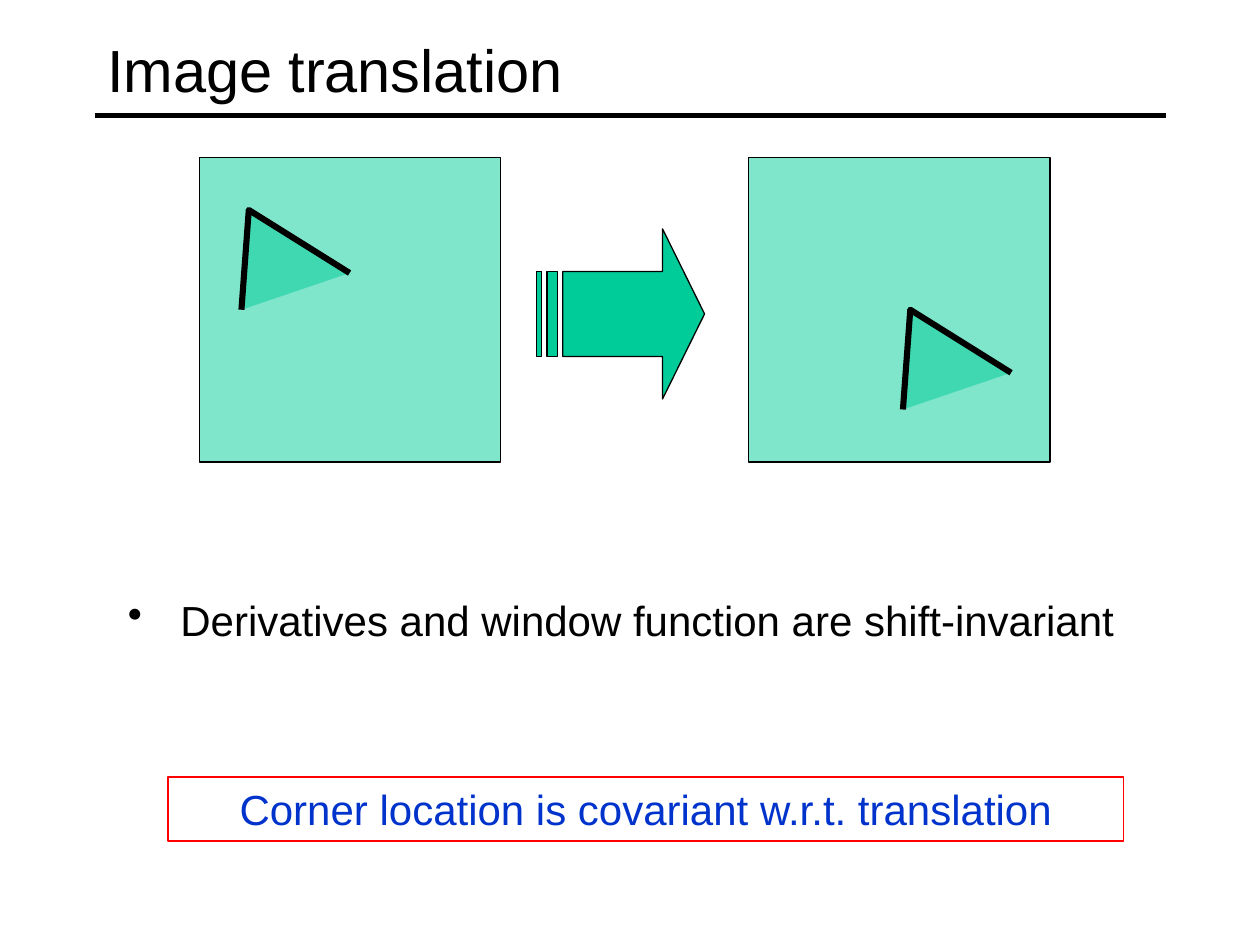
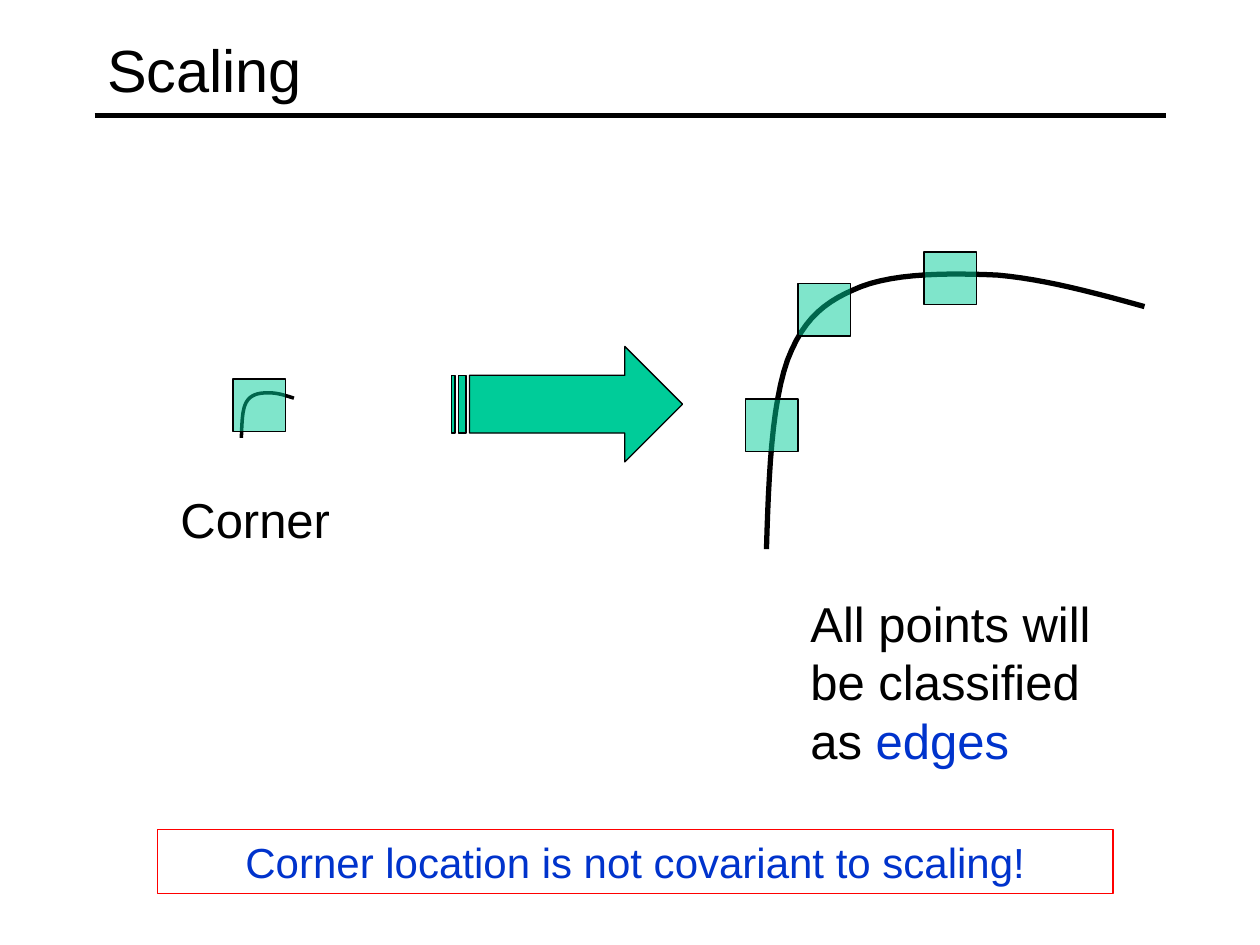
from lxml.etree import SubElement as Sub
from pptx import Presentation
from pptx.dml.color import RGBColor as RGB
from pptx.enum.shapes import MSO_CONNECTOR as Conn, MSO_SHAPE as Kind
from pptx.enum.text import MSO_ANCHOR as Anchor, PP_ALIGN as Align
from pptx.oxml.ns import qn
from pptx.util import Emu, Inches, Pt

COLS, ROWS = 120, 90
WIDE, HIGH = Inches(10), Inches(7.5)
HUES = {"ink": "000000", "mint": "00CC99", "frame": "FF0000", "key": "0033CC"}
FONTS = {
    "title": {"name": "Arial", "size": Pt(34)},
    "label": {"name": "Arial", "size": Pt(28)},
    "body": {"name": "Arial", "size": Pt(24)},
}
FRAME = {"word_wrap": True, "vertical_anchor": Anchor.MIDDLE}
WEDGE = [(0, 9.5), (0.7, 0), (10.3, 6)]
BEND_SIZE = (36, 26.3)
BEND = [
    (0, 26.3), (0.2, 19.4), (0.5, 12.5), (2, 8.3),
    (3.6, 4.1), (5.8, 2.6), (9, 1.3),
    (12.4, 0), (17.5, 0), (22, 0.2),
    (26.5, 0.6), (31.3, 1.9), (36, 3.2),
]
STEPS = 12
SPOT = 5


def col(n):
    """Return the distance of n grid columns."""
    return Emu(round(WIDE * n / COLS))


def row(n):
    """Return the distance of n grid rows."""
    return Emu(round(HIGH * n / ROWS))


def place(x, y, w, h):
    """Return a grid box as slide lengths."""
    return col(x), row(y), col(w), row(h)


def assign(item, values):
    """Set each named value on an item."""
    for name, value in values.items():
        setattr(item, name, value)


def paint(shape, fill=None, line="ink", width=0.75, alpha=None):
    """Give a shape its fill, outline and opacity in percent."""
    shape.shadow.inherit = False
    if fill:
        shape.fill.solid()
        shape.fill.fore_color.rgb = RGB.from_string(HUES[fill])
    else:
        shape.fill.background()
    if alpha:
        hue = shape._element.spPr.find(qn("a:solidFill")).find(qn("a:srgbClr"))
        Sub(hue, qn("a:alpha"), val=str(alpha * 1000))
    shape.line.color.rgb = RGB.from_string(HUES[line])
    shape.line.width = Pt(width)


def write(shape, runs, style, align=Align.LEFT, anchor=Anchor.TOP):
    """Fill a shape with one paragraph of (text, colour) runs."""
    frame = shape.text_frame
    assign(frame, FRAME | {"vertical_anchor": anchor})
    para = frame.paragraphs[0]
    para.alignment = align
    for text, hue in runs:
        run = para.add_run()
        run.text = text
        assign(run.font, FONTS[style])
        run.font.color.rgb = RGB.from_string(HUES[hue])
    return para


def start(deck, title):
    """Add a slide with its title and the rule below it."""
    slide = deck.slides.add_slide(deck.slide_layouts[5])
    head = slide.shapes.title
    box = place(9, 1, 102, 11)
    assign(head, dict(zip(("left", "top", "width", "height"), box)))
    write(head, [(title, "ink")], "title", anchor=Anchor.MIDDLE)
    rule = slide.shapes.add_connector(
        Conn.STRAIGHT, col(9), row(11), col(111), row(11))
    rule.line.color.rgb = RGB.from_string(HUES["ink"])
    rule.line.width = Pt(3)
    Sub(rule._element.spPr, qn("a:effectLst"))
    return slide


def label(slide, box, runs, style="label"):
    """Add a plain text box and return its paragraph."""
    return write(slide.shapes.add_textbox(*place(*box)), runs, style)


def bullet(slide, box, text):
    """Add a text box with one bulleted line."""
    props = label(slide, box, [(text, "ink")], "body")._p.get_or_add_pPr()
    props.set("marL", str(col(5)))
    props.set("indent", str(-col(5)))
    Sub(props, qn("a:buChar"), char="•")


def verdict(slide, x, y, text):
    """Add the framed conclusion."""
    box = slide.shapes.add_shape(Kind.RECTANGLE, *place(x, y, 91, 6.1))
    paint(box, line="frame")
    write(box, [(text, "key")], "body", Align.CENTER, Anchor.MIDDLE)


def pane(slide, x, y, w, h):
    """Add a half-clear mint rectangle."""
    box = slide.shapes.add_shape(Kind.RECTANGLE, *place(x, y, w, h))
    paint(box, "mint", alpha=50)


def arrow(slide, box, head):
    """Add a striped arrow whose head is a share of its height."""
    shape = slide.shapes.add_shape(Kind.STRIPED_RIGHT_ARROW, *place(*box))
    shape.adjustments[0] = 0.5
    shape.adjustments[1] = head
    paint(shape, "mint")


def trace(slide, x, y, points, **look):
    """Add an open outline through points measured from x, y."""
    spots = [(col(x + dx), row(y + dy)) for dx, dy in points]
    pen = slide.shapes.build_freeform(*spots[0])
    pen.add_line_segments(spots[1:], close=False)
    paint(pen.convert_to_shape(), **look)


def cubic(a, b, c, d, t):
    """Return the point at t on a cubic curve."""
    s = 1 - t
    return tuple(
        s**3 * p + 3 * s * s * t * q + 3 * s * t * t * u + t**3 * v
        for p, q, u, v in zip(a, b, c, d))


def bend(slide, x, y, w, h, width):
    """Add the rounded corner curve scaled to a grid box."""
    kx, ky = w / BEND_SIZE[0], h / BEND_SIZE[1]
    knots = [(px * kx, py * ky) for px, py in BEND]
    points = knots[:1] + [
        cubic(*knots[i:i + 4], n / STEPS)
        for i in range(0, len(knots) - 1, 3)
        for n in range(1, STEPS + 1)]
    trace(slide, x, y, points, width=width)


def shift(deck):
    """Build the slide on image translation."""
    slide = start(deck, "Image translation")
    bullet(slide, (11, 56, 101, 6.1),
           "Derivatives and window function are shift-invariant")
    for x, dx, dy in ((19, 4, 5), (71.3, 14.7, 14.5)):
        pane(slide, x, 15, 28.7, 29)
        trace(slide, x + dx, 15 + dy, WEDGE,
              fill="mint", alpha=50, width=3.5)
    arrow(slide, (51.1, 21.8, 16, 16.2), 0.25)
    verdict(slide, 16, 74, "Corner location is covariant w.r.t. translation")


def scale(deck):
    """Build the slide on scaling."""
    slide = start(deck, "Scaling")
    label(slide, (76, 55.9, 34, 18),
          [("All points will be classified as ", "ink"), ("edges", "key")])
    label(slide, (16, 46, 21, 6.8), [("Corner", "ink")])
    bend(slide, 23, 37.4, 5, 4.3, 2)
    bend(slide, 73, 26, *BEND_SIZE, 3)
    for x, y in ((22.2, 36.1), (88, 24), (76, 27), (71, 38)):
        pane(slide, x, y, SPOT, SPOT)
    arrow(slide, (43, 33, 22, 11), 0.5)
    verdict(slide, 15, 79, "Corner location is not covariant to scaling!")


def main():
    """Build and save the deck."""
    deck = Presentation()
    assign(deck, {"slide_width": WIDE, "slide_height": HIGH})
    shift(deck)
    scale(deck)
    deck.save("out.pptx")


if __name__ == "__main__":
    main()
